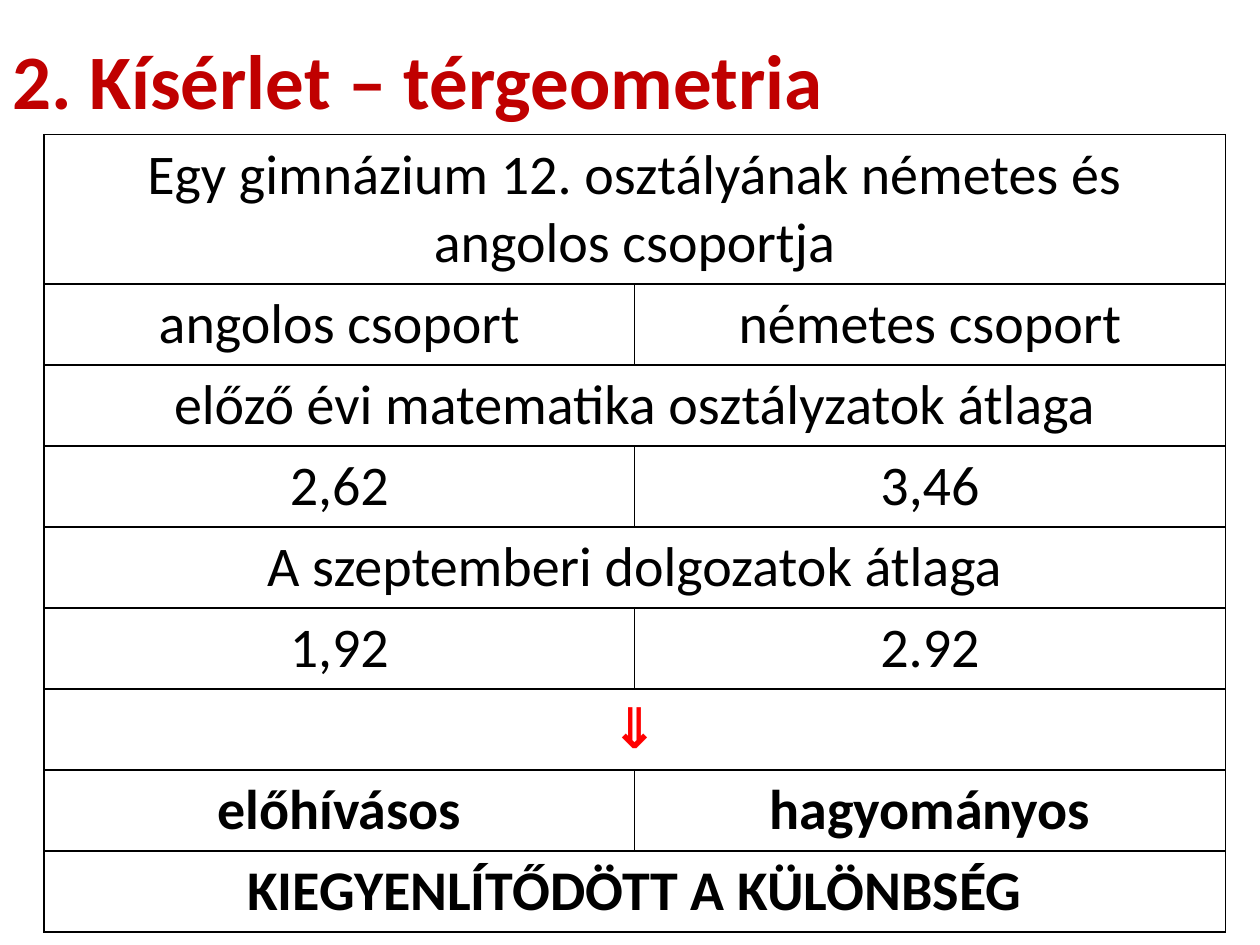
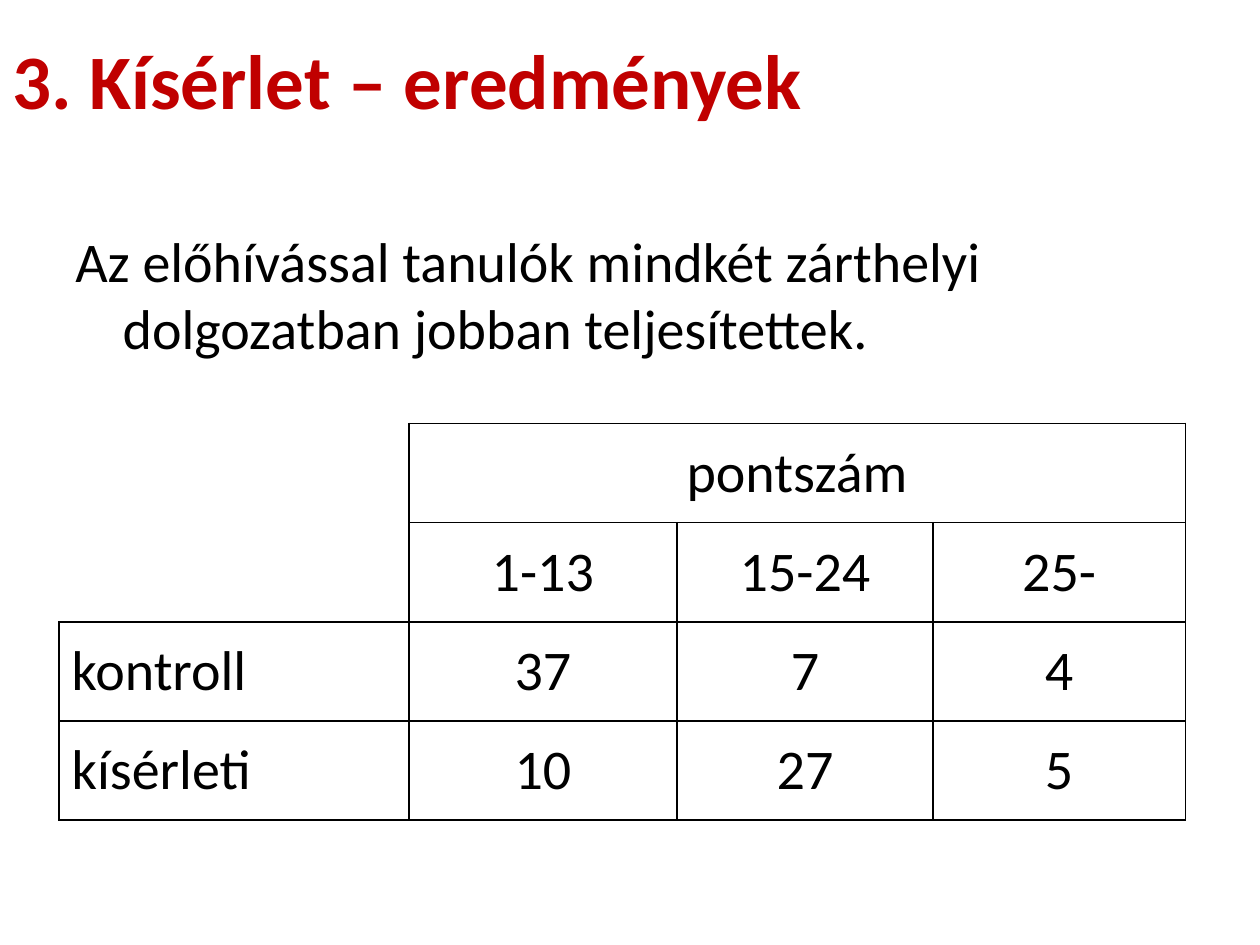
import pptx
import pptx.dml.color
import pptx.enum.text
import pptx.util
from lxml import etree
from pptx.oxml.ns import qn

Pt = pptx.util.Pt
ALIGN = pptx.enum.text.PP_ALIGN
ANCHOR = pptx.enum.text.MSO_ANCHOR

FONT = "Calibri"
BLACK = "000000"
TITLE_RED = "C00000"
ARROW_RED = "FF0000"
TITLE_SIZE = 44
TEXT_SIZE = 32
PLAIN_TABLE_STYLE = "{2D5ABB26-0587-4C30-8999-92F81FD0307C}"


def color(hex_string):
    return pptx.dml.color.RGBColor.from_string(hex_string)


class Deck:
    """Holds the presentation, its style and the current slide."""

    def __init__(self):
        self.presentation = pptx.Presentation()
        self.presentation.slide_width = Pt(720)
        self.presentation.slide_height = Pt(540)
        self.slide = None

    def new_slide(self, title):
        self.slide = self.presentation.slides.add_slide(self.presentation.slide_layouts[6])
        self.text(title, 0, 0, 648, 90, TITLE_SIZE, TITLE_RED, True, ANCHOR.MIDDLE)

    def style(self, paragraph, size=TEXT_SIZE, hex_color=BLACK, bold=False):
        font = paragraph.font
        font.name, font.size, font.bold = FONT, Pt(size), bold
        font.color.rgb = color(hex_color)

    def text(self, content, left, top, width, height, size=TEXT_SIZE,
             hex_color=BLACK, bold=False, anchor=ANCHOR.TOP, hanging=0):
        shape = self.slide.shapes.add_textbox(Pt(left), Pt(top), Pt(width), Pt(height))
        frame = shape.text_frame
        frame.word_wrap = True
        frame.vertical_anchor = anchor
        paragraph = frame.paragraphs[0]
        paragraph.text = content
        if hanging:
            properties = paragraph._p.get_or_add_pPr()
            properties.set("marL", str(Pt(hanging)))
            properties.set("indent", str(-Pt(hanging)))
        self.style(paragraph, size, hex_color, bold)

    def table(self, rows, left, top, widths, heights, anchor=ANCHOR.TOP):
        """Draw a bordered table; None continues the cell to its left."""
        frame = self.slide.shapes.add_table(len(rows), len(widths), Pt(left), Pt(top),
                                            Pt(sum(widths)), Pt(sum(heights)))
        table = frame.table
        table.first_row = table.horz_banding = False
        table._tbl.tblPr.find(qn("a:tableStyleId")).text = PLAIN_TABLE_STYLE
        for column, width in zip(table.columns, widths):
            column.width = Pt(width)
        for row, height in zip(table.rows, heights):
            row.height = Pt(height)
        for row_index, row in enumerate(rows):
            for column_index, content in enumerate(row):
                cell = table.cell(row_index, column_index)
                cell.fill.background()
                cell.vertical_anchor = anchor
                self.borders(cell)
                if content:
                    paragraph = cell.text_frame.paragraphs[0]
                    paragraph.text = content
                    paragraph.alignment = ALIGN.CENTER
                    self.style(paragraph)
            if None in row:
                start = row.index(None) - 1
                table.cell(row_index, start).merge(table.cell(row_index, len(row) - 1))
        return table

    def borders(self, cell, sides="LRTB"):
        """Replace the cell's borders with black lines on the given sides."""
        properties = cell._tc.get_or_add_tcPr()
        for side in "LRTB":
            for line in properties.findall(qn("a:ln" + side)):
                properties.remove(line)
        for index, side in enumerate(sides):
            line = etree.Element(qn("a:ln" + side), w=str(Pt(1)))
            fill = etree.SubElement(line, qn("a:solidFill"))
            etree.SubElement(fill, qn("a:srgbClr"), val=BLACK)
            properties.insert(index, line)


def build_geometry_slide(deck):
    deck.new_slide("2. Kísérlet – térgeometria")
    rows = [
        ["Egy gimnázium 12. osztályának németes és angolos csoportja", None],
        ["angolos csoport", "németes csoport"],
        ["előző évi matematika osztályzatok átlaga", None],
        ["2,62", "3,46"],
        ["A szeptemberi dolgozatok átlaga", None],
        ["1,92", "2.92"],
        ["⇓", None],
        ["előhívásos", "hagyományos"],
        ["KIEGYENLÍTŐDÖTT A KÜLÖNBSÉG", None],
    ]
    table = deck.table(rows, 25.2, 77, [337.5] * 2, [85.4] + [46.3] * 8)
    arrow_row = 6
    for row_index in range(arrow_row, len(rows)):
        hex_color = ARROW_RED if row_index == arrow_row else BLACK
        for cell in table.rows[row_index].cells:
            deck.style(cell.text_frame.paragraphs[0], hex_color=hex_color, bold=True)


def build_results_slide(deck):
    deck.new_slide("3. Kísérlet – eredmények")
    rows = [
        ["", "pontszám", None, None],
        ["", "1-13", "15-24", "25-"],
        ["kontroll", "37", "7", "4"],
        ["kísérleti", "10", "27", "5"],
    ]
    table = deck.table(rows, 33.8, 241.9, [199.8, 153.4, 146.2, 144.2], [56.7] * 4,
                       ANCHOR.MIDDLE)
    deck.borders(table.cell(0, 0), "R")
    deck.borders(table.cell(1, 0), "RB")
    for row_index in (2, 3):
        table.cell(row_index, 0).text_frame.paragraphs[0].alignment = ALIGN.LEFT
    deck.text("Az előhívással tanulók mindkét zárthelyi dolgozatban jobban teljesítettek.",
              36, 126, 648, 110, hanging=27)


def main():
    deck = Deck()
    build_geometry_slide(deck)
    build_results_slide(deck)
    deck.presentation.save("out.pptx")


if __name__ == "__main__":
    main()
